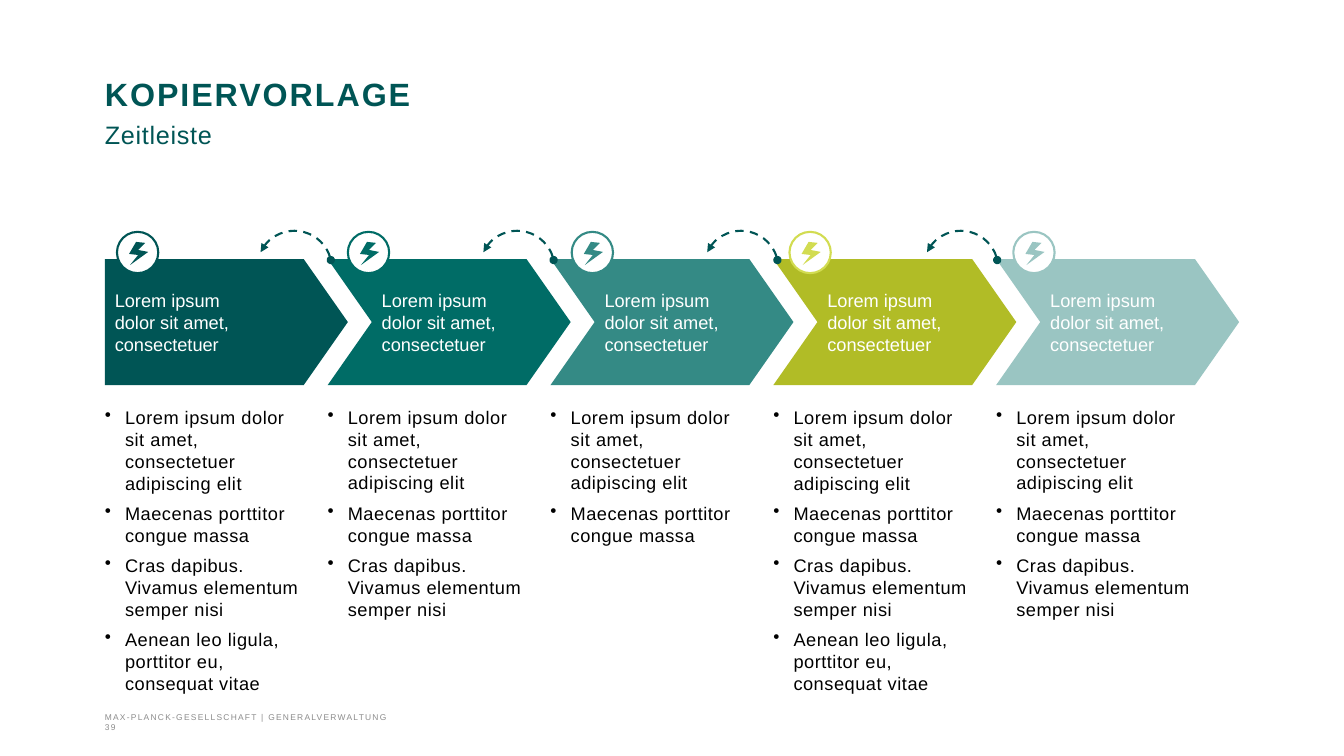
"""Builds a five-step timeline slide with arrows, badges and bullet columns."""
from dataclasses import dataclass

from lxml import etree
from pptx import Presentation
from pptx import util as u
from pptx.dml import color
from pptx.enum import dml, shapes, text
from pptx.oxml import ns

TITLE = "KOPIERVORLAGE"
SUBTITLE = "Zeitleiste"
FOOTER = "MAX-PLANCK-GESELLSCHAFT | GENERALVERWALTUNG\t\t39"
BULLETS = [
    "Lorem ipsum dolor sit amet, consectetuer adipiscing elit",
    "Maecenas porttitor congue massa",
    "Cras dapibus. Vivamus elementum semper nisi",
    "Aenean leo ligula, porttitor eu, consequat vitae",
]
STEP_TEXT = "Lorem ipsum dolor sit amet, consectetuer"
FIRST_STEP_TEXT = "Lorem ipsum\vdolor sit amet, consectetuer"
STEPS = [
    {"fill": "005555", "badge": "005555", "badge_left": 1.16, "bullets": 4},
    {"fill": "006C66", "badge": "006C66", "badge_left": 3.45, "bullets": 3},
    {"fill": "348A85", "badge": "348A85", "badge_left": 5.67, "bullets": 2},
    {"fill": "B1BC26", "badge": "D2DC51", "badge_left": 7.83, "bullets": 4},
    {"fill": "9AC5C2", "badge": "9AC5C2", "badge_left": 10.05, "bullets": 3},
]
ARC_LEFTS = [2.55, 4.76, 6.98, 9.16]
BOLT = [(0.31, 0.2), (0.21, 0.18), (0.28, 0.11), (0.19, 0.1),
        (0.12, 0.22), (0.21, 0.23), (0.13, 0.33)]
FOOTER_TABS = [11.22, 11.81]

LEFT, CONTENT_WIDTH, PITCH = 1.04, 11.26, 2.21
STEP_TOP, STEP_WIDTH, STEP_HEIGHT = 2.57, 2.41, 1.25
BADGE_TOP, BADGE_SIZE = 2.3, 0.41
ARC_TOP, ARC_SIZE, ARC_ANGLES = 2.29, 0.74, (115.49, 200.92)
BULLET_TOP, BULLET_WIDTH, BULLET_INDENT = 4.03, 1.95, 0.2


@dataclass(frozen=True)
class Theme:
    font: str = "Arial"
    dark: str = "005555"
    white: str = "FFFFFF"
    body: str = "000000"
    muted: str = "8C8C8C"
    title_size: float = 23
    subtitle_size: float = 18
    text_size: float = 13
    footer_size: float = 6
    line: float = 1.5


THEME = Theme()


def rgb(value):
    return color.RGBColor.from_string(value)


def style(span, size, tint, bold=False, spacing=0):
    font = span.font
    font.name, font.size, font.bold = THEME.font, u.Pt(size), bold
    font.color.rgb = rgb(tint)
    if spacing:
        span._r.get_or_add_rPr().set("spc", str(round(spacing * 100)))


def add_text(page, left, top, width, height):
    box = page.shapes.add_textbox(*map(u.Inches, (left, top, width, height)))
    frame = box.text_frame
    frame.word_wrap = True
    frame.margin_left = frame.margin_right = 0
    frame.margin_top = frame.margin_bottom = 0
    return frame


def add_preset(page, kind, left, top, width, height, fill=None, line=None):
    shape = page.shapes.add_shape(kind, *map(u.Inches, (left, top, width, height)))
    paint(shape, fill, line)
    return shape


def paint(shape, fill, line):
    shape.shadow.inherit = False
    if fill:
        shape.fill.solid()
        shape.fill.fore_color.rgb = rgb(fill)
    else:
        shape.fill.background()
    if line:
        shape.line.color.rgb = rgb(line)
        shape.line.width = u.Pt(THEME.line)
    else:
        shape.line.fill.background()


def add_title(page):
    para = add_text(page, LEFT, 0.76, CONTENT_WIDTH, 1.54).paragraphs[0]
    para.text = f"{TITLE}\v{SUBTITLE}"
    para.line_spacing, para.space_after = u.Pt(26), u.Pt(18)
    heading, subtitle = para.runs
    style(heading, THEME.title_size, THEME.dark, True, 1.4)
    style(subtitle, THEME.subtitle_size, THEME.dark, False, 0.5)


def add_footer(page):
    frame = add_text(page, LEFT, 7.06, CONTENT_WIDTH, 0.2)
    frame.word_wrap = False
    frame.vertical_anchor = text.MSO_ANCHOR.BOTTOM
    para = frame.paragraphs[0]
    para.text = FOOTER
    tabs = etree.SubElement(para._p.get_or_add_pPr(), ns.qn("a:tabLst"))
    for stop in FOOTER_TABS:
        etree.SubElement(tabs, ns.qn("a:tab"), pos=str(u.Inches(stop)), algn="r")
    for span in para.runs:
        style(span, THEME.footer_size, THEME.muted, spacing=0.9)


def add_step(page, index, step):
    kinds = shapes.MSO_SHAPE
    kind = kinds.CHEVRON if index else kinds.PENTAGON
    arrow = add_preset(page, kind, LEFT + index * PITCH, STEP_TOP,
                       STEP_WIDTH, STEP_HEIGHT, step["fill"])
    arrow.adjustments[0] = 0.35
    frame = arrow.text_frame
    frame.word_wrap = True
    frame.vertical_anchor = text.MSO_ANCHOR.MIDDLE
    para = frame.paragraphs[0]
    para.text = STEP_TEXT if index else FIRST_STEP_TEXT
    para.alignment = text.PP_ALIGN.LEFT
    for span in para.runs:
        style(span, THEME.text_size, THEME.white)


def add_badge(page, step):
    left = step["badge_left"]
    add_preset(page, shapes.MSO_SHAPE.OVAL, left, BADGE_TOP,
               BADGE_SIZE, BADGE_SIZE, THEME.white, step["badge"])
    points = [(u.Inches(left + x), u.Inches(BADGE_TOP + y)) for x, y in BOLT]
    builder = page.shapes.build_freeform(*points[0])
    builder.add_line_segments(points[1:])
    paint(builder.convert_to_shape(), step["badge"], None)


def add_bullets(page, index, step):
    lines = BULLETS[:step["bullets"]]
    frame = add_text(page, LEFT + index * PITCH, BULLET_TOP, BULLET_WIDTH,
                     0.74 * len(lines) - 0.08)
    frame.text = "\n".join(lines)
    for number, para in enumerate(frame.paragraphs):
        props = para._p.get_or_add_pPr()
        indent = u.Inches(BULLET_INDENT)
        props.set("marL", str(indent))
        props.set("indent", str(-indent))
        etree.SubElement(props, ns.qn("a:buChar"), char="•")
        if number:
            para.space_before = u.Pt(6)
        style(para.runs[0], THEME.text_size, THEME.body, spacing=0.4)


def add_return_arc(page, left):
    arc = add_preset(page, shapes.MSO_SHAPE.ARC, left, ARC_TOP,
                     ARC_SIZE, ARC_SIZE, line=THEME.dark)
    for number, angle in enumerate(ARC_ANGLES):
        arc.adjustments[number] = angle
    arc._element.spPr.find(ns.qn("a:xfrm")).set("flipH", "1")
    arc.line.dash_style = dml.MSO_LINE.DASH
    outline = arc.line._get_or_add_ln()
    etree.SubElement(outline, ns.qn("a:headEnd"), type="oval")
    etree.SubElement(outline, ns.qn("a:tailEnd"), type="triangle")


def main():
    deck = Presentation()
    deck.slide_width, deck.slide_height = u.Inches(13.33), u.Inches(7.5)
    page = deck.slides.add_slide(deck.slide_layouts[6])
    add_title(page)
    add_footer(page)
    for index, step in reversed(list(enumerate(STEPS))):
        add_step(page, index, step)
    for step in STEPS:
        add_badge(page, step)
    for index, step in enumerate(STEPS):
        add_bullets(page, index, step)
    for left in ARC_LEFTS:
        add_return_arc(page, left)
    deck.save("out.pptx")


if __name__ == "__main__":
    main()
